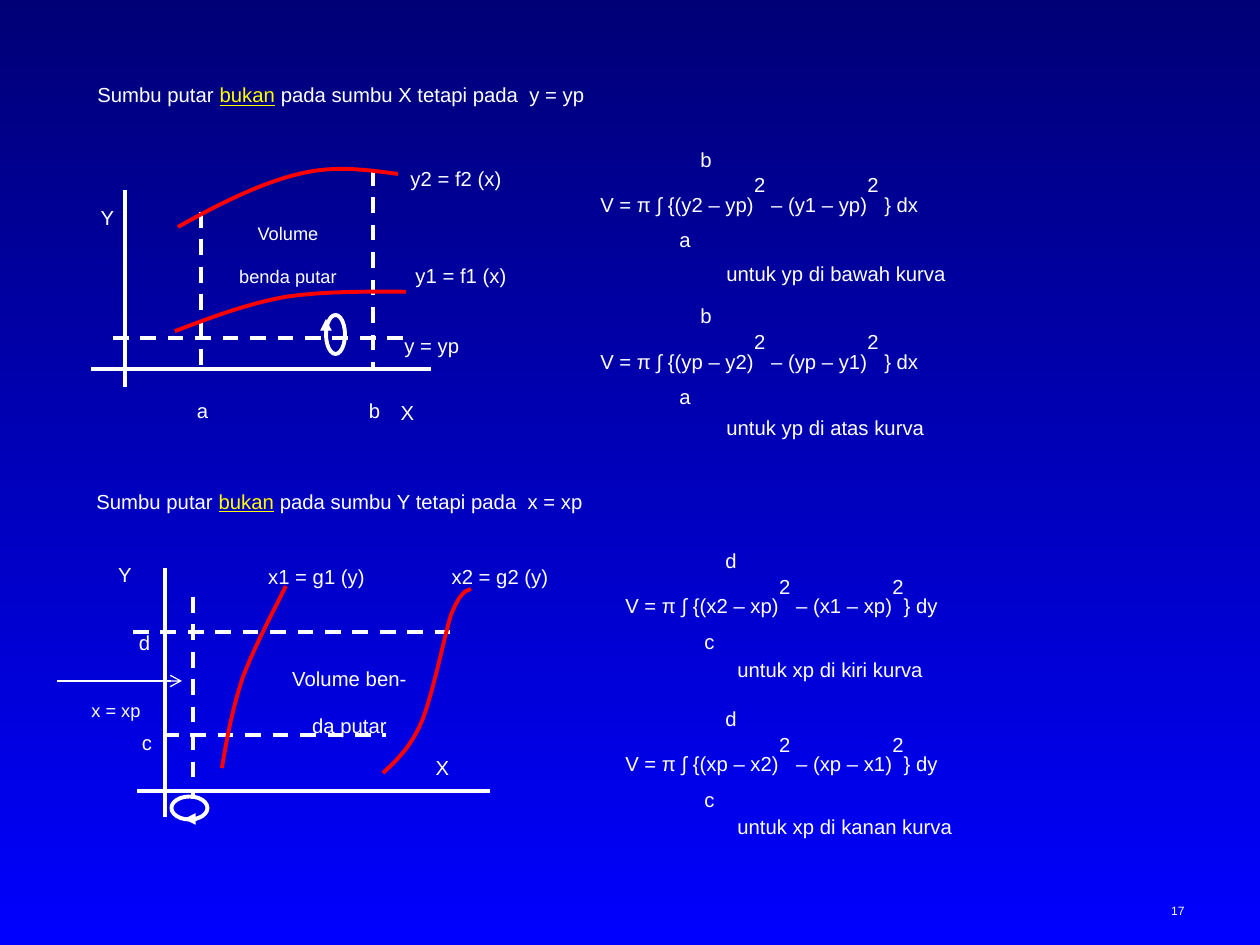
from dataclasses import dataclass

from lxml import etree
from pptx import Presentation
from pptx.dml.color import RGBColor
from pptx.enum.dml import MSO_LINE
from pptx.enum.shapes import MSO_CONNECTOR, MSO_SHAPE
from pptx.enum.text import MSO_ANCHOR, PP_ALIGN
from pptx.oxml.ns import qn
from pptx.util import Pt

PX = 914400 // 126
DASH = MSO_LINE.DASH
STRAIGHT = MSO_CONNECTOR.STRAIGHT
OVAL = MSO_SHAPE.OVAL
LEFT, CENTER, RIGHT = PP_ALIGN.LEFT, PP_ALIGN.CENTER, PP_ALIGN.RIGHT
TOP, BOTTOM = MSO_ANCHOR.TOP, MSO_ANCHOR.BOTTOM
LOWERED, RAISED = "-25000", "30000"
COLORS = {"text": "FFFFFF", "accent": "FFFF00", "curve": "FF0000",
          "night": "000076", "blue": "0000FF"}


@dataclass(frozen=True)
class Label:
    text: str
    left: int
    top: int
    width: int
    height: int
    size: int = 20
    align: PP_ALIGN = CENTER


@dataclass(frozen=True)
class Line:
    start: tuple[int, int]
    end: tuple[int, int]
    dashed: bool = False
    head: str = ""
    weight: float = 2.25


@dataclass(frozen=True)
class Ring:
    left: int
    top: int
    width: int
    height: int
    rotation: int = 0


@dataclass(frozen=True)
class Curve:
    points: list[tuple[int, int]]
    rotation: int = 0


@dataclass(frozen=True)
class Formula:
    text: str
    left: int
    top: int
    upper: str
    lower: str
    note: str
    note_left: int
    note_top: int


HEADINGS = [
    Label("Sumbu putar |bukan| pada sumbu X tetapi pada  y = yp", 85, 53, 869, 55, align=LEFT),
    Label("Sumbu putar |bukan| pada sumbu Y tetapi pada  x = xp", 84, 459, 868, 55, align=LEFT),
]
LABELS = [
    Label("X", 353, 370, 109, 72),
    Label("Volume\nbenda putar", 175, 195, 226, 115, 18),
    Label("b", 320, 369, 109, 52),
    Label("a", 148, 369, 109, 52),
    Label("Y", 53, 175, 109, 72),
    Label("y2 = f2 (x)", 371, 136, 170, 72),
    Label("y1 = f1 (x)", 376, 233, 170, 72),
    Label("y = yp", 392, 304, 121, 55, align=LEFT),
    Label("x2 = g2 (y)", 408, 534, 184, 72),
    Label("X", 386, 726, 113, 71),
    Label("d", 86, 601, 117, 53),
    Label("c", 88, 701, 118, 53),
    Label("Y", 66, 533, 118, 72),
    Label("Volume ben-\nda putar", 228, 636, 243, 97),
    Label("x1 = g1 (y)", 225, 534, 183, 72),
    Label("x = xp", 42, 672, 111, 50, 18, RIGHT),
]
LINES = [
    Line((113, 338), (403, 338), dashed=True),
    Line((326, 331), (326, 319), head="triangle"),
    Line((125, 190), (125, 387)),
    Line((91, 369), (431, 369)),
    Line((201, 212), (201, 368), dashed=True),
    Line((373, 170), (373, 368), dashed=True),
    Line((197, 819), (184, 819), head="triangle"),
    Line((165, 568), (165, 817)),
    Line((137, 791), (490, 791)),
    Line((163, 735), (386, 735), dashed=True),
    Line((133, 632), (450, 632), dashed=True),
    Line((193, 597), (193, 799), dashed=True),
    Line((57, 681), (182, 681), head="arrow", weight=0.75),
]
RINGS = [Ring(326, 315, 19, 39), Ring(178, 790, 23, 36, 270)]
CURVES = [
    Curve([(398, 174), (367, 170), (335, 165), (299, 174), (261, 183), (219, 204), (178, 227)]),
    Curve([(180, 351), (212, 332), (245, 312), (283, 298), (319, 286), (360, 279), (401, 272)],
          rotation=10),
    Curve([(383, 773), (397, 760), (411, 747), (422, 721), (433, 694), (444, 638), (451, 615),
           (460, 593), (465, 591), (471, 589)]),
    Curve([(222, 768), (227, 737), (233, 707), (243, 677), (255, 646), (271, 616), (286, 586)]),
]
FORMULAS = [
    Formula("V = π ∫ {(y2 – yp)|2 |– (y1 – yp)|2 |} dx", 588, 162, "b", "a",
            "untuk yp di bawah kurva", 714, 231),
    Formula("V = π ∫ {(yp – y2)|2 |– (yp – y1)|2 |} dx", 588, 319, "b", "a",
            "untuk yp di atas kurva", 714, 386),
    Formula("V = π ∫ {(x2 – xp)|2 |– (x1 – xp)|2|} dy", 613, 564, "d", "c",
            "untuk xp di kiri kurva", 725, 628),
    Formula("V = π ∫ {(xp – x2)|2 |– (xp – x1)|2|} dy", 613, 722, "d", "c",
            "untuk xp di kanan kurva", 725, 785),
]


def rgb(name: str) -> RGBColor:
    """Look up a named colour."""
    return RGBColor.from_string(COLORS[name])


def add_text(slide, label: Label, *, accent: bool = False, raised: bool = False,
             anchor: MSO_ANCHOR = TOP) -> None:
    """Write a label, styling the pieces enclosed in bars."""
    box = slide.shapes.add_textbox(label.left * PX, label.top * PX,
                                   label.width * PX, label.height * PX)
    frame = box.text_frame
    frame.word_wrap = True
    frame.vertical_anchor = anchor
    for row, text in enumerate(label.text.split("\n")):
        para = frame.add_paragraph() if row else frame.paragraphs[0]
        para.alignment = label.align
        for index, piece in enumerate(text.split("|")):
            marked = index % 2 == 1
            span = para.add_run()
            span.text = piece
            span.font.name = "Arial"
            span.font.size = Pt(label.size)
            span.font.color.rgb = rgb("accent" if marked and accent else "text")
            if marked and accent:
                span.font.underline = True
            span.font._element.set("baseline", RAISED if marked and raised else LOWERED)


def add_line(slide, line: Line) -> None:
    """Draw a straight line with an optional dash and arrowhead."""
    connector = slide.shapes.add_connector(
        STRAIGHT, *(value * PX for value in line.start + line.end))
    connector.line.color.rgb = rgb("text")
    connector.line.width = Pt(line.weight)
    if line.dashed:
        connector.line.dash_style = DASH
    if line.head:
        etree.SubElement(connector.line._get_or_add_ln(), qn("a:tailEnd"), type=line.head)
    etree.SubElement(connector._element.spPr, qn("a:effectLst"))


def outline(shape, color: str, rotation: int) -> None:
    """Leave a shape unfilled with a coloured outline."""
    shape.rotation = rotation
    shape.shadow.inherit = False
    shape.fill.background()
    shape.line.color.rgb = rgb(color)
    shape.line.width = Pt(2.25)


def add_ring(slide, ring: Ring) -> None:
    """Draw the ring that marks a turning axis."""
    sides = (ring.left, ring.top, ring.width, ring.height)
    shape = slide.shapes.add_shape(OVAL, *(side * PX for side in sides))
    outline(shape, "text", ring.rotation)


def add_curve(slide, curve: Curve) -> None:
    """Draw a chain of cubic Bezier arcs, three points to each arc."""
    start, *rest = [(x * PX, y * PX) for x, y in curve.points]
    builder = slide.shapes.build_freeform(*start)
    builder.add_line_segments(rest, close=False)
    shape = builder.convert_to_shape()
    segments = list(shape._element.iter(qn("a:lnTo")))
    outline_path = segments[0].getparent()
    for first in range(0, len(segments), 3):
        arc = etree.SubElement(outline_path, qn("a:cubicBezTo"))
        for segment in segments[first:first + 3]:
            arc.append(segment[0])
            outline_path.remove(segment)
    outline(shape, "curve", curve.rotation)


def add_formula(slide, formula: Formula) -> None:
    """Write an integral with its limits and its note."""
    left, top = formula.left, formula.top
    add_text(slide, Label(formula.text, left, top, 542, 55, align=LEFT), raised=True)
    add_text(slide, Label(formula.upper, left + 100, top - 45, 46, 55, align=LEFT))
    add_text(slide, Label(formula.lower, left + 79, top + 36, 46, 55, align=LEFT))
    add_text(slide, Label(formula.note, formula.note_left, formula.note_top, 431, 55, align=LEFT))


def main() -> None:
    """Build the slide on volumes of revolution."""
    deck = Presentation()
    deck.slide_width, deck.slide_height = 1260 * PX, 945 * PX
    page = deck.slides.add_slide(deck.slide_layouts[6])
    fill = page.background.fill
    fill.gradient()
    fill.gradient_angle = 270
    for stop, color in zip(fill.gradient_stops, ("night", "blue")):
        stop.color.rgb = rgb(color)
    for line in LINES:
        add_line(page, line)
    for ring in RINGS:
        add_ring(page, ring)
    for curve in CURVES:
        add_curve(page, curve)
    for heading in HEADINGS:
        add_text(page, heading, accent=True)
    for label in LABELS:
        add_text(page, label)
    for formula in FORMULAS:
        add_formula(page, formula)
    add_text(page, Label("17", 903, 861, 294, 63, 12, RIGHT), anchor=BOTTOM)
    deck.save("out.pptx")


if __name__ == "__main__":
    main()
